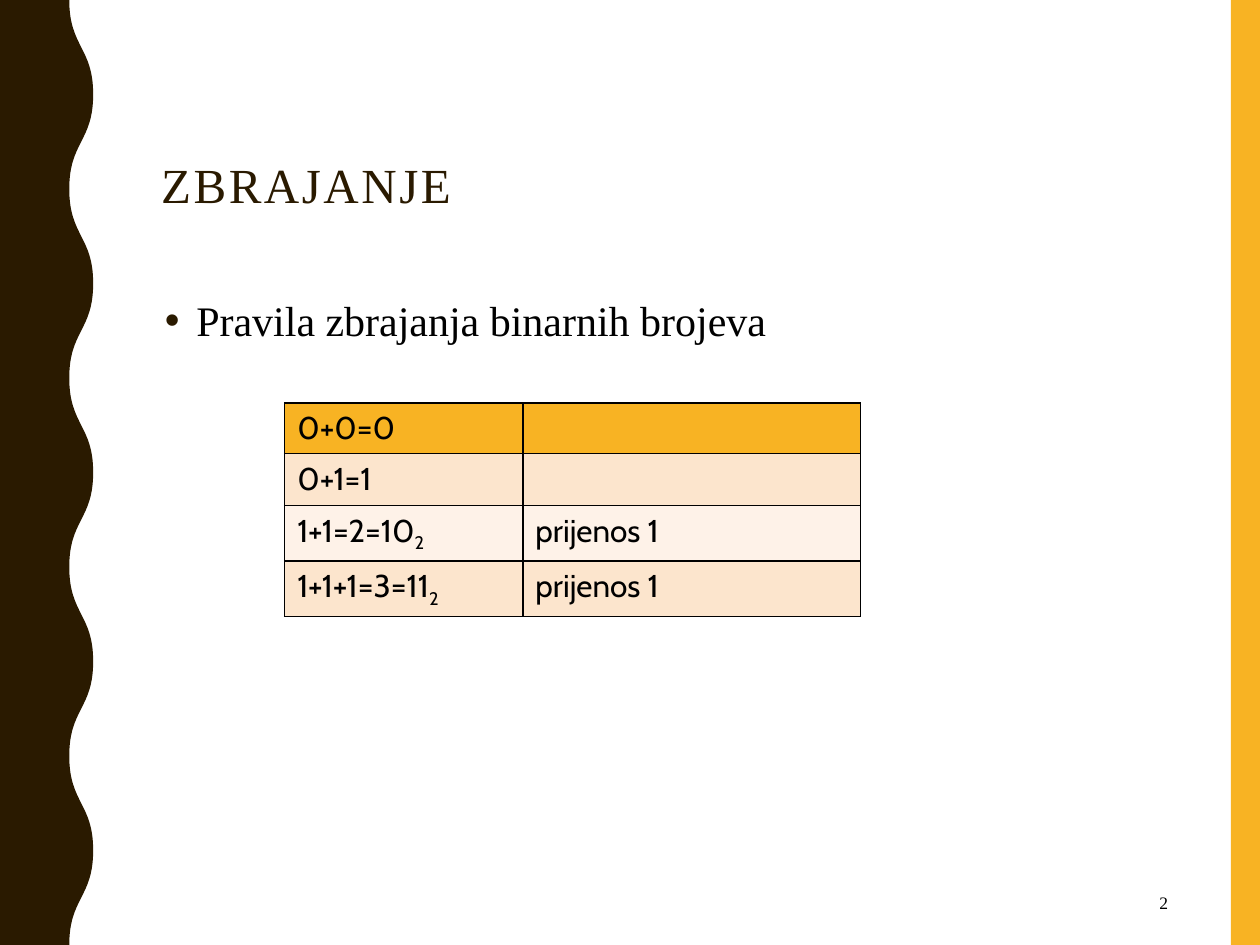
from lxml import etree
from pptx import Presentation
from pptx.dml.color import RGBColor
from pptx.enum.shapes import MSO_SHAPE
from pptx.enum.text import MSO_ANCHOR, PP_ALIGN
from pptx.oxml.ns import qn
from pptx.util import Inches, Pt

RECT = MSO_SHAPE.RECTANGLE
MIDDLE = MSO_ANCHOR.MIDDLE
RIGHT = PP_ALIGN.RIGHT
SERIF, SANS = "Times New Roman", "Cabin"
COLORS = {"brown": "2A1A00", "gold": "F8B323", "peach": "FCE5CD",
          "cream": "FEF2E8", "black": "000000"}
RULES = [(0.4, "gold", "0+0=0", "", ""),
         (0.41, "peach", "0+1=1", "", ""),
         (0.41, "cream", "1+1=2=10", "2", "prijenos 1"),
         (0.41, "peach", "1+1+1=3=11", "2", "prijenos 1")]


def rgb(name):
    return RGBColor.from_string(COLORS[name])


def set_font(font, name, size, color):
    font.name = name
    font.size = Pt(size)
    font.color.rgb = rgb(color)


def paint(sp, color):
    sp.shadow.inherit = False
    sp.fill.solid()
    sp.fill.fore_color.rgb = rgb(color)
    sp.line.fill.background()


def add_band(s, x, y, w, h, color):
    sp = s.shapes.add_shape(RECT, Inches(x), Inches(y), Inches(w), Inches(h))
    paint(sp, color)


def add_wavy_edge(s, inner, outer, height, waves, color):
    half = height / waves / 2
    knots = [(outer if i % 2 else inner, half * i)
             for i in range(waves * 2 + 1)]
    corners = [(0, height), (0, 0)]
    fb = s.shapes.build_freeform(Inches(inner), 0)
    fb.add_line_segments([(Inches(x), Inches(y))
                          for x, y in knots[1:] + corners])
    sp = fb.convert_to_shape()
    paint(sp, color)
    lines = list(sp._element.iter(qn("a:lnTo")))
    for line, (x0, y0), (x1, y1) in zip(lines, knots, knots[1:]):
        middle = (y0 + y1) / 2
        curve = etree.Element(qn("a:cubicBezTo"))
        for x, y in ((x0, middle), (x1, middle), (x1, y1)):
            etree.SubElement(curve, qn("a:pt"),
                             x=str(Inches(x)), y=str(Inches(y)))
        line.getparent().replace(line, curve)


def add_text(s, x, y, w, h, text, size, color):
    sp = s.shapes.add_textbox(Inches(x), Inches(y), Inches(w), Inches(h))
    sp.text_frame.word_wrap = True
    p = sp.text_frame.paragraphs[0]
    p.text = text
    set_font(p.font, SERIF, size, color)
    return sp.text_frame, p


def add_bullet(p, color, indent):
    pPr = p._p.get_or_add_pPr()
    pPr.set("marL", str(Inches(indent)))
    pPr.set("indent", str(-Inches(indent)))
    bullet_color = etree.Element(qn("a:buClr"))
    etree.SubElement(bullet_color, qn("a:srgbClr"), val=COLORS[color])
    font = etree.Element(qn("a:buFont"), typeface="Arial")
    char = etree.Element(qn("a:buChar"), char="•")
    defaults = pPr.find(qn("a:defRPr"))
    for el in (bullet_color, font, char):
        defaults.addprevious(el)


def add_borders(cell, color, width):
    tcPr = cell._tc.get_or_add_tcPr()
    for i, side in enumerate(("lnL", "lnR", "lnT", "lnB")):
        ln = etree.Element(qn(f"a:{side}"), w=str(Pt(width)))
        fill = etree.SubElement(ln, qn("a:solidFill"))
        etree.SubElement(fill, qn("a:srgbClr"), val=COLORS[color])
        tcPr.insert(i, ln)


def fill_cell(cell, text, base, color):
    cell.fill.solid()
    cell.fill.fore_color.rgb = rgb(color)
    add_borders(cell, "black", 1)
    p = cell.text_frame.paragraphs[0]
    if text:
        p.add_run().text = text
        set_font(p.font, SANS, 18, "black")
    if base:
        r = p.add_run()
        r.text = base
        r.font._element.set("baseline", "-25000")


def add_rules_table(s, x, y, widths):
    height = sum(rule[0] for rule in RULES)
    frame = s.shapes.add_table(len(RULES), len(widths), Inches(x), Inches(y),
                               Inches(sum(widths)), Inches(height))
    table = frame.table
    table.first_row = table.horz_banding = False
    for column, width in zip(table.columns, widths):
        column.width = Inches(width)
    for i, (row_height, color, total, base, carry) in enumerate(RULES):
        table.rows[i].height = Inches(row_height)
        fill_cell(table.cell(i, 0), total, base, color)
        fill_cell(table.cell(i, 1), carry, "", color)


def main():
    prs = Presentation()
    prs.slide_width, prs.slide_height = Inches(10), Inches(7.5)
    s = prs.slides.add_slide(prs.slide_layouts[6])

    add_band(s, 9.77, 0, 0.23, 7.5, "gold")
    add_wavy_edge(s, 0.55, 0.74, 7.5, 5, "brown")

    tf, p = add_text(s, 1.18, 1.23, 3.32, 0.61, "ZBRAJANJE", 28, "brown")
    p.line_spacing = 0.9
    p.runs[0].font._element.set("spc", "150")

    tf, p = add_text(s, 1.21, 2.25, 5.37, 0.74,
                     "Pravila zbrajanja binarnih brojeva", 24, "black")
    p.line_spacing = 1.1
    p.space_before = Pt(7)
    add_bullet(p, "brown", 0.25)

    tf, p = add_text(s, 7.06, 6.97, 2.31, 0.38, "2", 10, "black")
    tf.vertical_anchor = MIDDLE
    p.alignment = RIGHT

    add_rules_table(s, 2.26, 3.2, (1.89, 2.68))
    prs.save("out.pptx")


if __name__ == "__main__":
    main()
